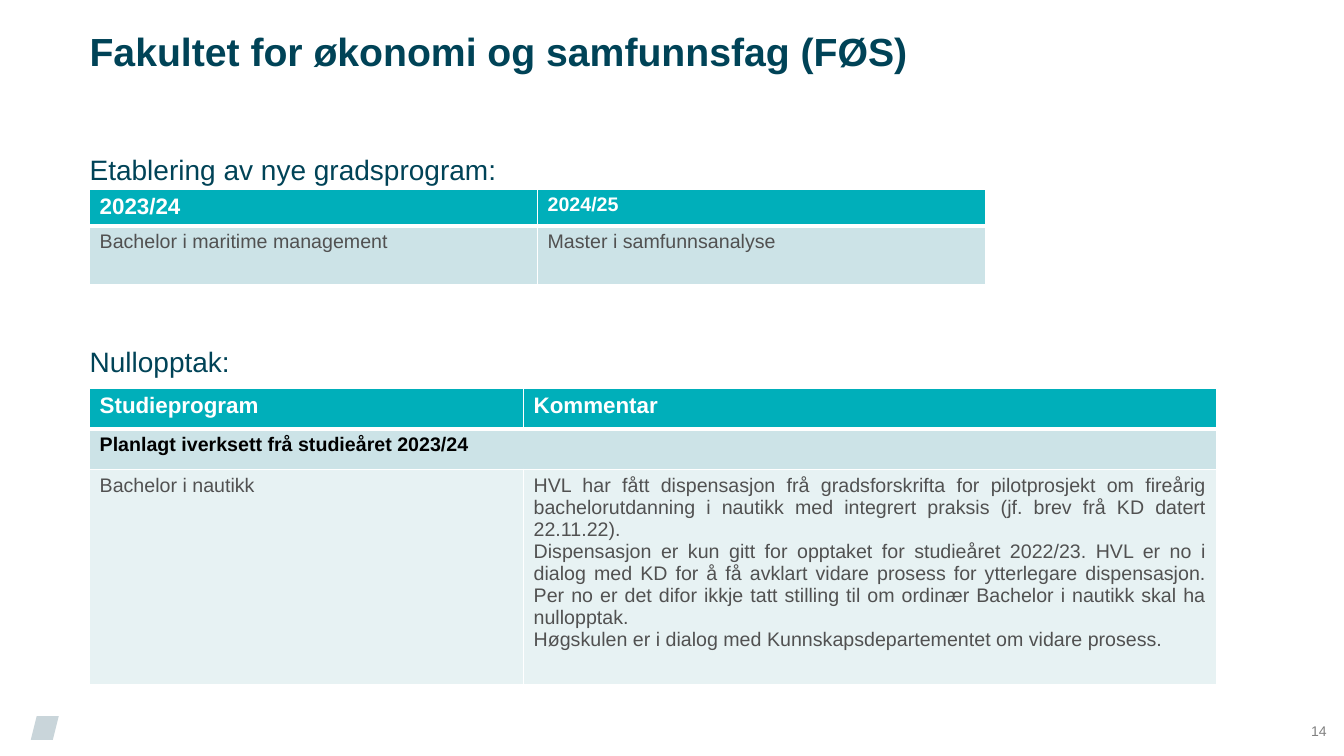
import pptx
import pptx.util
import pptx.dml.color
import pptx.enum.shapes
import pptx.enum.text
import pptx.oxml.ns
import lxml.etree

Pt = pptx.util.Pt
RGBColor = pptx.dml.color.RGBColor
ALIGN = pptx.enum.text.PP_ALIGN
ANCHOR = pptx.enum.text.MSO_ANCHOR

NAVY = RGBColor(0x00, 0x43, 0x57)
TEAL = RGBColor(0x00, 0xAF, 0xBA)
PALE = RGBColor(0xCC, 0xE3, 0xE7)
PALER = RGBColor(0xE7, 0xF2, 0xF3)
INK = RGBColor(0x51, 0x51, 0x51)
GRAY = RGBColor(0x80, 0x80, 0x80)
MARK = RGBColor(0xC9, 0xD5, 0xDA)
WHITE = RGBColor(0xFF, 0xFF, 0xFF)
BLACK = RGBColor(0, 0, 0)

COMMENTS = [
    "HVL har fått dispensasjon frå gradsforskrifta for pilotprosjekt om fireårig "
    "bachelorutdanning i nautikk med integrert praksis (jf. brev frå KD datert 22.11.22).",
    "Dispensasjon er kun gitt for opptaket for studieåret 2022/23. HVL er no i dialog med KD "
    "for å få avklart vidare prosess for ytterlegare dispensasjon. Per no er det difor ikkje "
    "tatt stilling til om ordinær Bachelor i nautikk skal ha nullopptak.",
    "Høgskulen er i dialog med Kunnskapsdepartementet om vidare prosess.",
]


def write(frame, lines, size, color, bold=False, align=ALIGN.LEFT):
    frame.word_wrap = True
    for index, line in enumerate(lines):
        para = frame.add_paragraph() if index else frame.paragraphs[0]
        para.alignment = align
        span = para.add_run()
        span.text = line
        span.font.name = "Arial"
        span.font.size = Pt(size)
        span.font.bold = bold
        span.font.color.rgb = color


def clear_insets(frame):
    frame.margin_left = frame.margin_top = frame.margin_right = frame.margin_bottom = 0


def add_label(page, box, text, size, color, align=ALIGN.LEFT, anchor=ANCHOR.TOP):
    frame = page.shapes.add_textbox(*map(Pt, box)).text_frame
    clear_insets(frame)
    frame.vertical_anchor = anchor
    write(frame, [text], size, color, align=align)


def add_title(page, box, text):
    title = page.shapes.title
    title.left, title.top, title.width, title.height = map(Pt, box)
    frame = title.text_frame
    clear_insets(frame)
    frame.margin_bottom = Pt(34)
    frame.vertical_anchor = ANCHOR.MIDDLE
    write(frame, [text], 28, NAVY, bold=True)


def add_grid(page, left, top, widths, heights):
    table = page.shapes.add_table(len(heights), len(widths), Pt(left), Pt(top),
                                  Pt(sum(widths)), Pt(sum(heights))).table
    for column, width in zip(table.columns, widths):
        column.width = Pt(width)
    for row, height in zip(table.rows, heights):
        row.height = Pt(height)
    return table


def set_borders(cell, widths):
    """Border widths run left, right, top, bottom."""
    properties = cell._tc.get_or_add_tcPr()
    for index, (side, width) in enumerate(zip("LRTB", widths)):
        line = lxml.etree.Element(pptx.oxml.ns.qn(f"a:ln{side}"), w=str(Pt(width)))
        fill = lxml.etree.SubElement(line, pptx.oxml.ns.qn("a:solidFill"))
        lxml.etree.SubElement(fill, pptx.oxml.ns.qn("a:srgbClr"), val=str(WHITE))
        properties.insert(index, line)


def fill_row(table, row, texts, sizes, fill, color, bold=False, aligns=(ALIGN.LEFT,) * 2):
    for column, (lines, size, align) in enumerate(zip(texts, sizes, aligns)):
        cell = table.cell(row, column)
        cell.fill.solid()
        cell.fill.fore_color.rgb = fill
        set_borders(cell, (1, 1, 3 if row == 1 else 1, 3 if row == 0 else 1))
        if lines:
            write(cell.text_frame, lines, size, color, bold, align)


def add_new_programmes(page, left, top):
    # The heading box ends above the table so its descenders stay clear
    add_label(page, (left, top, 860, 24), "Etablering av nye gradsprogram:", 20, NAVY)
    table = add_grid(page, left, top + 26, (320, 320), (25, 42))
    fill_row(table, 0, [["2023/24"], ["2024/25"]], (16, 14), TEAL, WHITE, bold=True)
    fill_row(table, 1, [["Bachelor i maritime management"], ["Master i samfunnsanalyse"]],
             (14, 14), PALE, INK)


def add_paused_programmes(page, left, top):
    add_label(page, (left, top, 860, 24), "Nullopptak:", 20, NAVY)
    table = add_grid(page, left, top + 31, (310, 495), (29, 29, 153.5))
    fill_row(table, 0, [["Studieprogram"], ["Kommentar"]], (16, 16), TEAL, WHITE, bold=True)
    fill_row(table, 1, [["Planlagt iverksett frå studieåret 2023/24"], []], (14, 14),
             PALE, BLACK, bold=True)
    table.cell(1, 0).merge(table.cell(1, 1))
    fill_row(table, 2, [["Bachelor i nautikk"], COMMENTS], (14, 14), PALER, INK,
             aligns=(ALIGN.LEFT, ALIGN.JUSTIFY))


def add_footer(page, left, top):
    # Plain shape at the left, page number at the right
    mark = page.shapes.add_shape(pptx.enum.shapes.MSO_SHAPE.PARALLELOGRAM,
                                 Pt(left + 22), Pt(top + 7), Pt(20), Pt(17))
    mark.shadow.inherit = False
    mark.fill.solid()
    mark.fill.fore_color.rgb = MARK
    mark.line.fill.background()
    add_label(page, (left + 924.5, top, 35, 35), "14", 10, GRAY, ALIGN.CENTER, ANCHOR.MIDDLE)


def main():
    deck = pptx.Presentation()
    deck.slide_width, deck.slide_height = Pt(960), Pt(540)
    page = deck.slides.add_slide(deck.slide_layouts[5])
    add_title(page, (64, 0, 860, 106.5), "Fakultet for økonomi og samfunnsfag (FØS)")
    add_new_programmes(page, 64, 109)
    add_paused_programmes(page, 64, 246.2)
    add_footer(page, 0, 504.5)
    deck.save("out.pptx")


if __name__ == "__main__":
    main()
